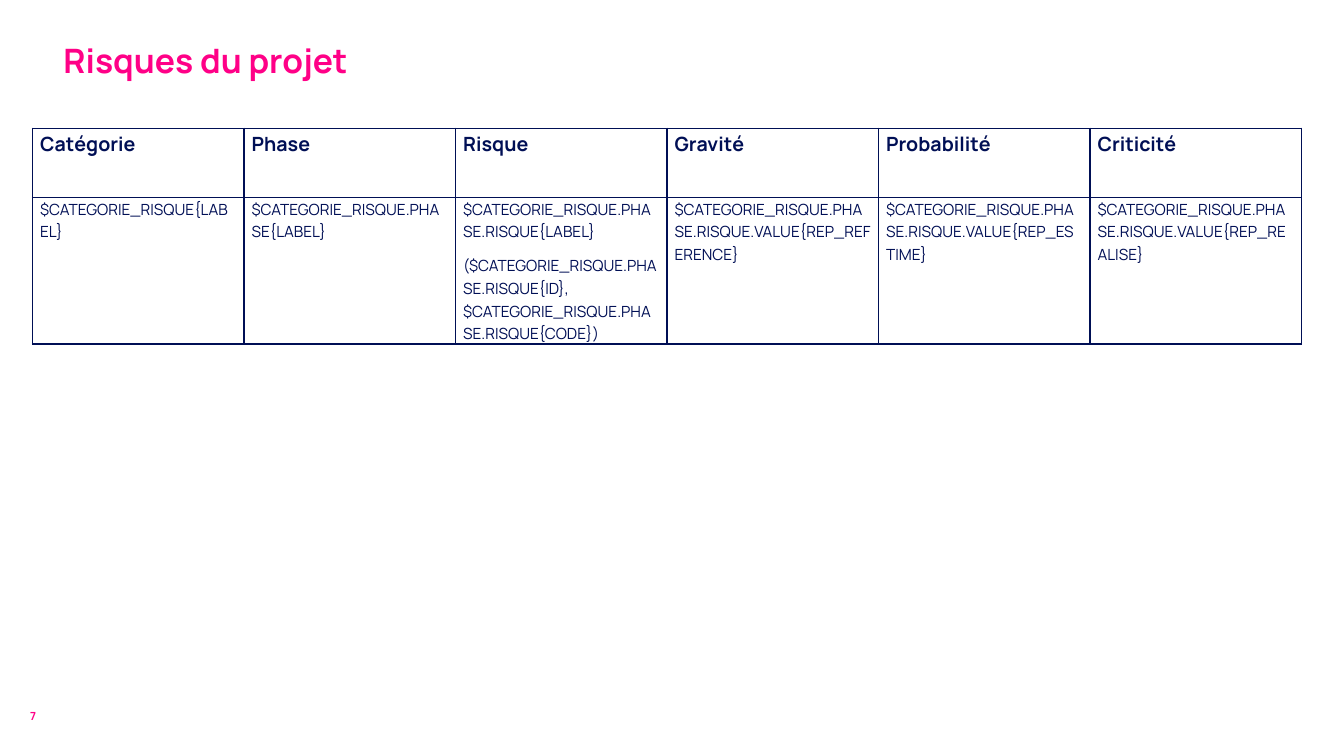
from lxml.etree import SubElement
from pptx import Presentation
from pptx.dml.color import RGBColor
from pptx.enum.text import MSO_ANCHOR
from pptx.oxml.ns import qn
from pptx.util import Cm, Pt

PINK = RGBColor(0xFF, 0x00, 0x87)
NAVY = RGBColor(0x00, 0x0F, 0x55)
FONT = "Manrope"

COLUMNS = [
    ("Catégorie", ["$CATEGORIE_RISQUE{LABEL}"]),
    ("Phase", ["$CATEGORIE_RISQUE.PHASE{LABEL}"]),
    ("Risque", [
        "$CATEGORIE_RISQUE.PHASE.RISQUE{LABEL}",
        "($CATEGORIE_RISQUE.PHASE.RISQUE{ID}, $CATEGORIE_RISQUE.PHASE.RISQUE{CODE})",
    ]),
    ("Gravité", ["$CATEGORIE_RISQUE.PHASE.RISQUE.VALUE{REP_REFERENCE}"]),
    ("Probabilité", ["$CATEGORIE_RISQUE.PHASE.RISQUE.VALUE{REP_ESTIME}"]),
    ("Criticité", ["$CATEGORIE_RISQUE.PHASE.RISQUE.VALUE{REP_REALISE}"]),
]


def add_run(p, text, size, color, bold):
    r = p.add_run()
    r.text = text
    r.font.name = FONT
    r.font.size = Pt(size)
    r.font.bold = bold
    r.font.color.rgb = color


def add_borders(cell):
    tc_pr = cell._tc.get_or_add_tcPr()
    for side in ("a:lnL", "a:lnR", "a:lnT", "a:lnB"):
        ln = SubElement(tc_pr, qn(side), w=str(Pt(1)))
        fill = SubElement(ln, qn("a:solidFill"))
        SubElement(fill, qn("a:srgbClr"), val=str(NAVY))


prs = Presentation()
prs.slide_width = Cm(33.87)
prs.slide_height = Cm(19.05)
s = prs.slides.add_slide(prs.slide_layouts[6])

for text, left, top, width, height, size, anchor in [
    ("7", 0.51, 17.7, 1.5, 0.71, 8, MSO_ANCHOR.MIDDLE),
    ("Risques du projet", 1.35, 0.74, 30.53, 1.4, 24, MSO_ANCHOR.BOTTOM),
]:
    sp = s.shapes.add_textbox(Cm(left), Cm(top), Cm(width), Cm(height))
    tf = sp.text_frame
    tf.word_wrap = True
    tf.vertical_anchor = anchor
    add_run(tf.paragraphs[0], text, size, PINK, True)

table = s.shapes.add_table(
    2, len(COLUMNS), Cm(0.82), Cm(3.23), Cm(32), Cm(5.44)
).table
table.first_row = False
table.horz_banding = False
table.rows[0].height = Cm(1.74)
table.rows[1].height = Cm(3.7)

for col, (heading, fields) in enumerate(COLUMNS):
    table.columns[col].width = Cm(5.33)
    for row, (lines, size) in enumerate([([heading], 14), (fields, 11)]):
        cell = table.cell(row, col)
        cell.margin_left = cell.margin_right = Cm(0.19)
        cell.margin_top = cell.margin_bottom = 0
        add_borders(cell)
        cell.fill.background()
        tf = cell.text_frame
        for i, line in enumerate(lines):
            p = tf.add_paragraph() if i else tf.paragraphs[0]
            p.line_spacing = 1.07
            p.space_after = Pt(8)
            add_run(p, line, size, NAVY, row == 0)

prs.save("out.pptx")
